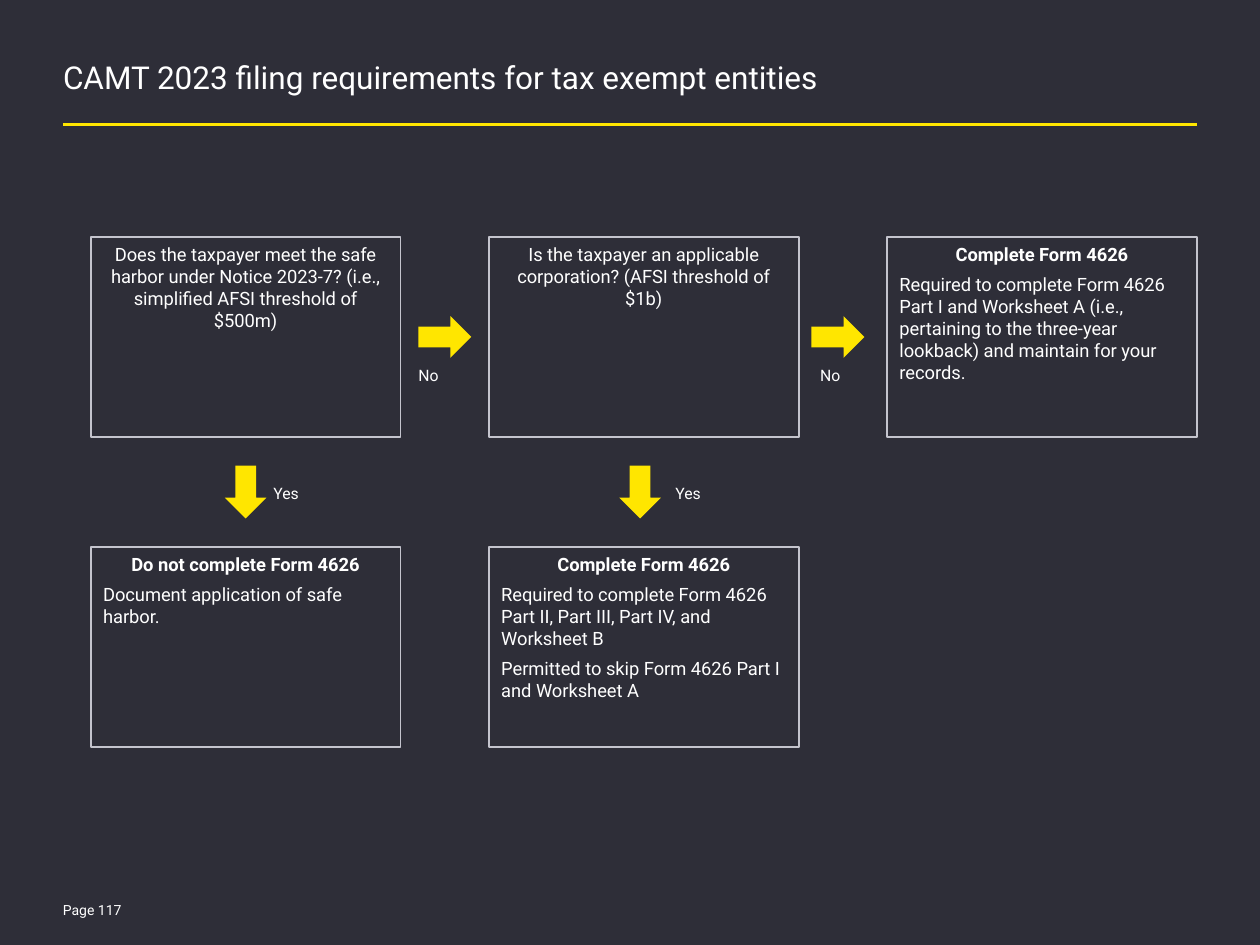
from lxml import etree
from pptx import Presentation
from pptx.dml.color import RGBColor
from pptx.enum.shapes import MSO_CONNECTOR, MSO_SHAPE
from pptx.enum.text import MSO_ANCHOR, MSO_AUTO_SIZE, PP_ALIGN
from pptx.oxml.ns import qn
from pptx.util import Inches, Pt

STRAIGHT = MSO_CONNECTOR.STRAIGHT
RECTANGLE, RIGHT_ARROW = MSO_SHAPE.RECTANGLE, MSO_SHAPE.RIGHT_ARROW
TOP = MSO_ANCHOR.TOP
NO_AUTOFIT = MSO_AUTO_SIZE.NONE
LEFT, CENTER = PP_ALIGN.LEFT, PP_ALIGN.CENTER

COLORS = {"background": "2E2E38", "text": "FFFFFF",
          "accent": "FFE600", "outline": "C4C4CD"}
FONT = "Roboto"

# Grid of decision boxes, in inches
GRID_LEFT, GRID_TOP = 0.72, 1.88
COLUMN_STEP, ROW_STEP = 3.16, 2.46
BOX_WIDTH, BOX_HEIGHT = 2.46, 1.59
ARROW_WIDTH, ARROW_HEIGHT = 0.42, 0.33

# Column, row, centred heading, is the heading bold, left-aligned body
STEPS = [
    (0, 0, "Does the taxpayer meet the safe harbor under Notice 2023-7? "
     "(i.e., simplified AFSI threshold of $500m)", False, []),
    (1, 0, "Is the taxpayer an applicable corporation? "
     "(AFSI threshold of $1b)", False, []),
    (2, 0, "Complete Form 4626", True,
     ["Required to complete Form 4626 Part I and Worksheet A (i.e., pertaining "
      "to the three-year lookback) and maintain for your records."]),
    (0, 1, "Do not complete Form 4626", True,
     ["Document application of safe harbor."]),
    (1, 1, "Complete Form 4626", True,
     ["Required to complete Form 4626 Part II, Part III, Part IV, and Worksheet B",
      "Permitted to skip Form 4626 Part I and Worksheet A"]),
]
# Arrow left, arrow top, rotation, label, label left, label top
ANSWERS = [
    (3.32, 2.51, 0, "No", 3.32, 2.87),
    (6.44, 2.51, 0, "No", 6.51, 2.87),
    (1.74, 3.74, 90, "Yes", 2.17, 3.81),
    (4.87, 3.74, 90, "Yes", 5.36, 3.81),
]


def color(name):
    return RGBColor.from_string(COLORS[name])


def write(para, text, size, bold=False, align=LEFT, after=0):
    para.text = text
    para.alignment = align
    para.space_after = Pt(after)
    para.font.name = FONT
    para.font.size = Pt(size)
    para.font.bold = bold
    para.font.color.rgb = color("text")


def add_title(slide, text):
    title = slide.shapes.title
    title.left, title.top = Inches(0.5), Inches(0.51)
    title.width, title.height = Inches(9), Inches(0.48)
    frame = title.text_frame
    frame.margin_left = frame.margin_right = 0
    frame.margin_top = frame.margin_bottom = 0
    frame.vertical_anchor = TOP
    frame.auto_size = NO_AUTOFIT
    write(frame.paragraphs[0], text, 18)
    frame.paragraphs[0].line_spacing = 0.85


def add_rule(slide):
    rule = slide.shapes.add_connector(
        STRAIGHT, Inches(0.5), Inches(0.99), Inches(9.5), Inches(0.99))
    rule.line.color.rgb = color("accent")
    rule.line.width = Pt(1.5)
    etree.SubElement(rule._element.spPr, qn("a:effectLst"))


def add_step(slide, column, row, heading, bold, body):
    box = slide.shapes.add_shape(
        RECTANGLE,
        Inches(GRID_LEFT + column * COLUMN_STEP), Inches(GRID_TOP + row * ROW_STEP),
        Inches(BOX_WIDTH), Inches(BOX_HEIGHT))
    box.shadow.inherit = False
    box.fill.background()
    box.line.color.rgb = color("outline")
    box.line.width = Pt(1)
    frame = box.text_frame
    frame.word_wrap = True
    frame.vertical_anchor = TOP
    write(frame.paragraphs[0], heading, 10.5, bold, CENTER, 4.5)
    for text in body:
        write(frame.add_paragraph(), text, 10.5, after=4.5)


def add_arrow(slide, left, top, rotation):
    arrow = slide.shapes.add_shape(
        RIGHT_ARROW, Inches(left), Inches(top),
        Inches(ARROW_WIDTH), Inches(ARROW_HEIGHT))
    arrow.rotation = rotation
    arrow.shadow.inherit = False
    arrow.fill.solid()
    arrow.fill.fore_color.rgb = color("accent")
    arrow.line.fill.background()


def add_text(slide, text, left, top, width, height, size):
    box = slide.shapes.add_textbox(
        Inches(left), Inches(top), Inches(width), Inches(height))
    box.text_frame.word_wrap = True
    write(box.text_frame.paragraphs[0], text, size)
    return box.text_frame


def add_label(slide, text, left, top):
    frame = add_text(slide, text, left, top, ARROW_WIDTH, 0.18, 9)
    frame.margin_left = frame.margin_right = frame.margin_bottom = 0
    frame.margin_top = Inches(0.03)


def main():
    deck = Presentation()
    deck.slide_width, deck.slide_height = Inches(10), Inches(7.5)
    slide = deck.slides.add_slide(deck.slide_layouts.get_by_name("Title Only"))
    slide.background.fill.solid()
    slide.background.fill.fore_color.rgb = color("background")

    # Page frame
    add_text(slide, "Page 117", 0.4, 7.11, 0.73, 0.2, 8)
    add_rule(slide)
    add_title(slide, "CAMT 2023 filing requirements for tax exempt entities")

    # Decision flow
    for step in STEPS:
        add_step(slide, *step)
    for left, top, rotation, label, label_left, label_top in ANSWERS:
        add_arrow(slide, left, top, rotation)
        add_label(slide, label, label_left, label_top)

    deck.save("out.pptx")


if __name__ == "__main__":
    main()
